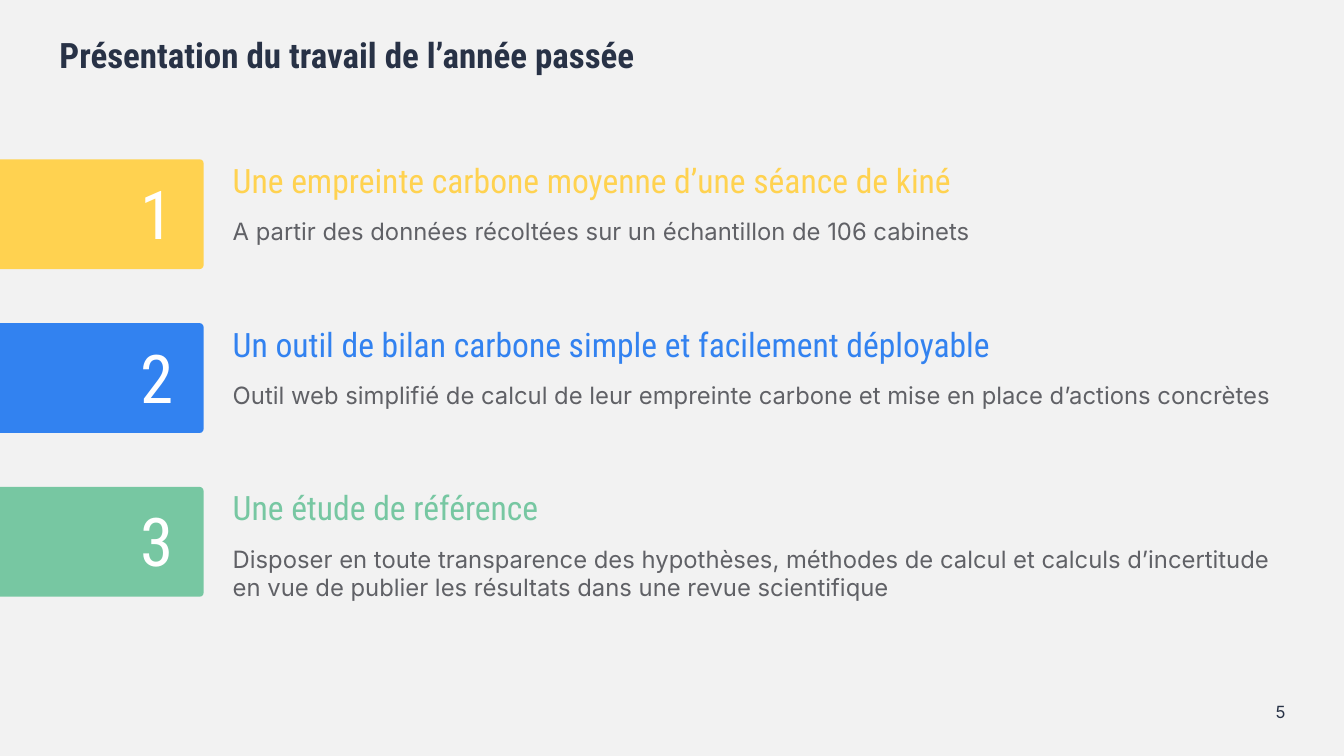
from pptx import Presentation
from pptx import util as u
from pptx.dml import color
from pptx.enum import shapes, text

HEADING_FONT = "Roboto Condensed"
BODY_FONT = "Inter"
NAVY = "283246"
GREY = "606166"
WHITE = "FFFFFF"
BACKGROUND = "F2F2F2"

ACHIEVEMENTS = [
    ("FFD250", "Une empreinte carbone moyenne d’une séance de kiné",
     "A partir des données récoltées sur un échantillon de 106 cabinets"),
    ("3282F0", "Un outil de bilan carbone simple et facilement déployable",
     "Outil web simplifié de calcul de leur empreinte carbone et mise en place d’actions concrètes"),
    ("77C7A2", "Une étude de référence",
     "Disposer en toute transparence des hypothèses, méthodes de calcul et calculs d’incertitude "
     "en vue de publier les résultats dans une revue scientifique"),
]


def rgb(value):
    return color.RGBColor.from_string(value)


def paint(fill, value):
    fill.solid()
    fill.fore_color.rgb = rgb(value)


def add_text(slide, box, wording, size, font, ink, spacing=None, bold=False,
             align=text.PP_ALIGN.LEFT, anchor=text.MSO_ANCHOR.TOP,
             insets=(0.1, 0.05, 0.1, 0.05)):
    frame = slide.shapes.add_textbox(*map(u.Inches, box)).text_frame
    frame.word_wrap = True
    frame.vertical_anchor = anchor
    (frame.margin_left, frame.margin_top,
     frame.margin_right, frame.margin_bottom) = map(u.Inches, insets)
    paragraph = frame.paragraphs[0]
    paragraph.text = wording
    paragraph.alignment = align
    paragraph.line_spacing = spacing
    paragraph.font.name = font
    paragraph.font.size = u.Pt(size)
    paragraph.font.bold = bold
    paragraph.font.color.rgb = rgb(ink)


def add_title(slide, box):
    add_text(slide, box, "Présentation du travail de l’année passée", 25,
             HEADING_FONT, NAVY, 0.9, bold=True, insets=(0, 0.04, 0.04, 0))


def add_achievement(slide, box, number, accent, heading, detail):
    left, top, width, height = box
    tab_width = 2.11
    text_left = left + 2.3
    text_width = width - 2.3
    heading_height = 0.52

    tab = slide.shapes.add_shape(
        shapes.MSO_SHAPE.ROUNDED_RECTANGLE,
        *map(u.Inches, (left, top, tab_width, height)))
    tab.adjustments[0] = 0.037
    tab.shadow.inherit = False
    paint(tab.fill, accent)
    tab.line.fill.background()

    add_text(slide, (left + 1.39, top + 0.17, 0.59, 0.76), str(number), 48,
             HEADING_FONT, WHITE, 0.9)
    add_text(slide, (text_left, top, text_width, heading_height), heading, 24,
             HEADING_FONT, accent, 0.9)
    add_text(slide, (text_left, top + heading_height, text_width, height - heading_height),
             detail, 17, BODY_FONT, GREY)


def add_page_number(slide, box):
    add_text(slide, box, "5", 12, BODY_FONT, NAVY, align=text.PP_ALIGN.RIGHT,
             anchor=text.MSO_ANCHOR.MIDDLE, insets=(0, 0, 0, 0))


def main():
    deck = Presentation()
    deck.slide_width = u.Inches(13.33)
    deck.slide_height = u.Inches(7.5)
    slide = deck.slides.add_slide(deck.slide_layouts[6])
    paint(slide.background.fill, BACKGROUND)

    add_title(slide, (0.59, 0.34, 12.16, 0.4))
    for index, achievement in enumerate(ACHIEVEMENTS):
        add_achievement(slide, (-0.09, 1.58 + 1.625 * index, 12.83, 1.09),
                        index + 1, *achievement)
    add_page_number(slide, (12.19, 6.94, 0.56, 0.25))

    deck.save("out.pptx")


if __name__ == "__main__":
    main()
